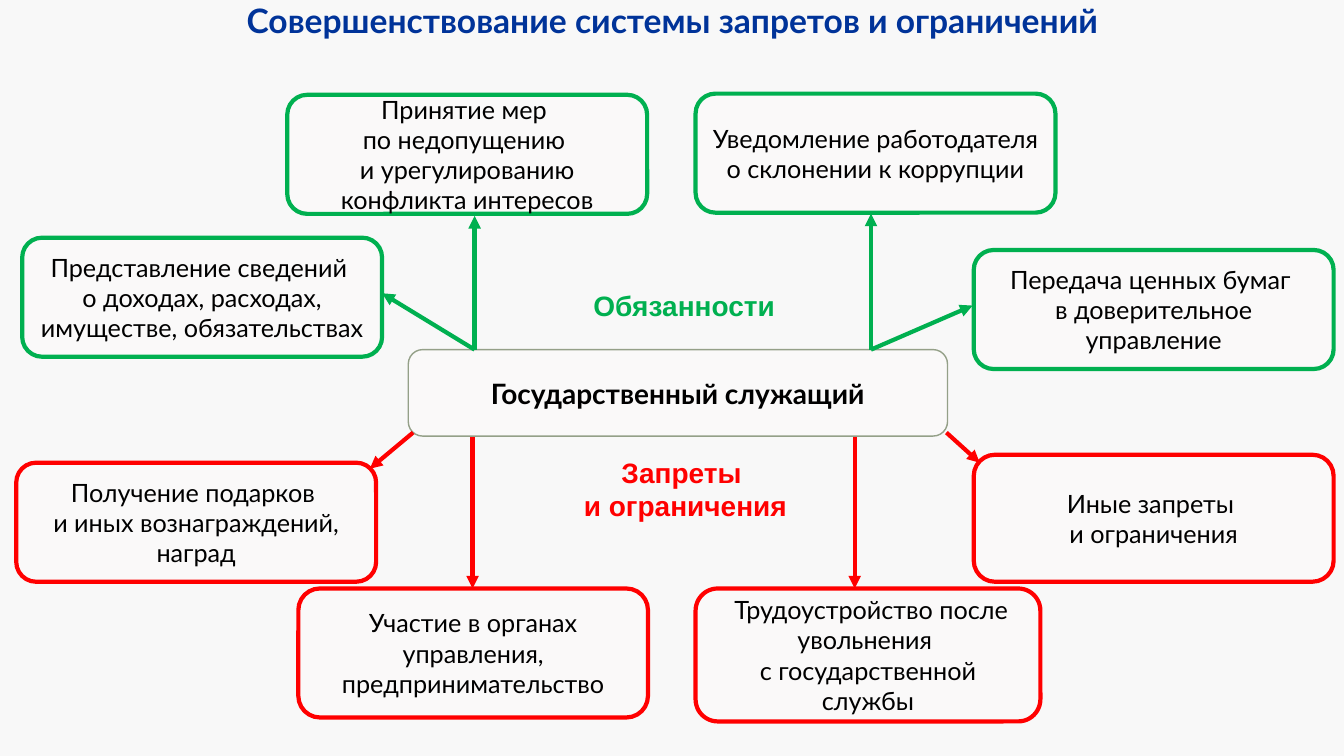
from dataclasses import dataclass

from lxml.etree import SubElement
from pptx import Presentation
from pptx.dml.color import RGBColor
from pptx.enum.shapes import MSO_CONNECTOR as Connector, MSO_SHAPE as Shape
from pptx.enum.text import MSO_ANCHOR as Anchor, MSO_AUTO_SIZE as AutoSize, PP_ALIGN as Align
from pptx.oxml.ns import qn
from pptx.util import Cm, Pt


@dataclass(frozen=True)
class Theme:
    background: str = "F8F8F8"
    title: str = "003399"
    text: str = "000000"
    panel: str = "FAF9F9"
    outline: str = "94A088"
    duty: str = "00B050"
    ban: str = "FF0000"
    body_font: str = "Lato"
    label_font: str = "Arial"
    title_size: int = 24
    label_size: int = 20
    body_size: int = 18
    thin: int = 1
    thick: int = 3


THEME = Theme()

# Places are left, top, width, height in centimetres
DUTIES = [
    ((0.56, 5.99, 9.07, 3), ["Представление сведений ",
                             "о доходах, расходах, имуществе, обязательствах"]),
    ((7.24, 2.39, 9.07, 3), ["Принятие мер ", "по недопущению ",
                             "и урегулированию конфликта интересов"]),
    ((17.53, 2.36, 9.07, 3), ["Уведомление работодателя о склонении к коррупции"]),
    ((24.54, 6.3, 9.07, 3), ["Передача ценных бумаг ", "в доверительное управление"]),
]
BANS = [
    ((0.41, 11.66, 9.07, 3), ["Получение подарков ", "и иных вознаграждений, наград"]),
    ((7.52, 14.83, 8.81, 3.25), ["Участие в органах управления, предпринимательство"]),
    ((17.53, 14.83, 8.69, 3.35), [" Трудоустройство после увольнения ",
                                  "с государственной службы"]),
    ((24.54, 11.46, 9.07, 3.2), ["Иные запреты ", "и ограничения"]),
]

# Arrows run from the central box to the outer boxes
DUTY_ARROWS = [
    ((11.96, 8.81), (9.63, 7.39)),
    ((11.96, 8.81), (11.96, 5.44)),
    ((21.95, 8.81), (21.95, 5.38)),
    ((21.95, 8.81), (24.51, 7.7)),
]
BAN_ARROWS = [
    ((10.41, 10.9), (9.32, 11.81)),
    ((11.91, 11.02), (11.91, 14.83)),
    ((21.54, 11.02), (21.54, 14.83)),
    ((23.85, 10.9), (24.69, 11.66)),
]


def color(value):
    return RGBColor.from_string(value)


def write(frame, lines, size, ink, font=THEME.body_font, bold=False, anchor=Anchor.MIDDLE):
    frame.word_wrap = True
    frame.auto_size = AutoSize.NONE
    frame.vertical_anchor = anchor
    for index, line in enumerate(lines):
        para = frame.add_paragraph() if index else frame.paragraphs[0]
        para.alignment = Align.CENTER
        run = para.add_run()
        run.text = line
        run.font.name = font
        run.font.size = Pt(size)
        run.font.bold = bold
        run.font.color.rgb = color(ink)


def add_title(page, place, text):
    title = page.shapes.title
    title.left, title.top, title.width, title.height = map(Cm, place)
    write(title.text_frame, [text], THEME.title_size, THEME.title, bold=True)


def add_box(page, place, lines, outline, width=THEME.thick, size=THEME.body_size, bold=False):
    box = page.shapes.add_shape(Shape.ROUNDED_RECTANGLE, *map(Cm, place))
    box.shadow.inherit = False
    box.fill.solid()
    box.fill.fore_color.rgb = color(THEME.panel)
    box.line.color.rgb = color(outline)
    box.line.width = Pt(width)
    write(box.text_frame, lines, size, THEME.text, bold=bold)


def add_label(page, place, lines, ink):
    label = page.shapes.add_textbox(*map(Cm, place))
    write(label.text_frame, lines, THEME.label_size, ink, THEME.label_font, True, Anchor.TOP)


def add_arrow(page, start, end, ink):
    arrow = page.shapes.add_connector(Connector.STRAIGHT, *map(Cm, start + end))
    arrow.line.color.rgb = color(ink)
    arrow.line.width = Pt(THEME.thick)
    SubElement(arrow.line._get_or_add_ln(), qn("a:tailEnd"), type="triangle")
    SubElement(arrow._element.spPr, qn("a:effectLst"))


def main():
    deck = Presentation()
    deck.slide_width, deck.slide_height = Cm(33.87), Cm(19.05)
    page = deck.slides.add_slide(deck.slide_layouts[5])
    page.background.fill.solid()
    page.background.fill.fore_color.rgb = color(THEME.background)

    # Title and central box
    add_title(page, (4.65, -0.13, 24.59, 1.27),
              "Совершенствование системы запретов и ограничений")
    add_box(page, (10.29, 8.81, 13.59, 2.18), ["Государственный служащий"],
            THEME.outline, THEME.thin, THEME.label_size, bold=True)

    # Group labels
    add_label(page, (14.68, 7.14, 5.13, 1.12), ["Обязанности"], THEME.duty)
    add_label(page, (14.2, 11.35, 6.15, 1.96), ["Запреты ", "и ограничения"], THEME.ban)

    # Outer boxes and their arrows
    for boxes, arrows, ink in ((DUTIES, DUTY_ARROWS, THEME.duty), (BANS, BAN_ARROWS, THEME.ban)):
        for place, lines in boxes:
            add_box(page, place, lines, ink)
        for start, end in arrows:
            add_arrow(page, start, end, ink)

    deck.save("out.pptx")


if __name__ == "__main__":
    main()
